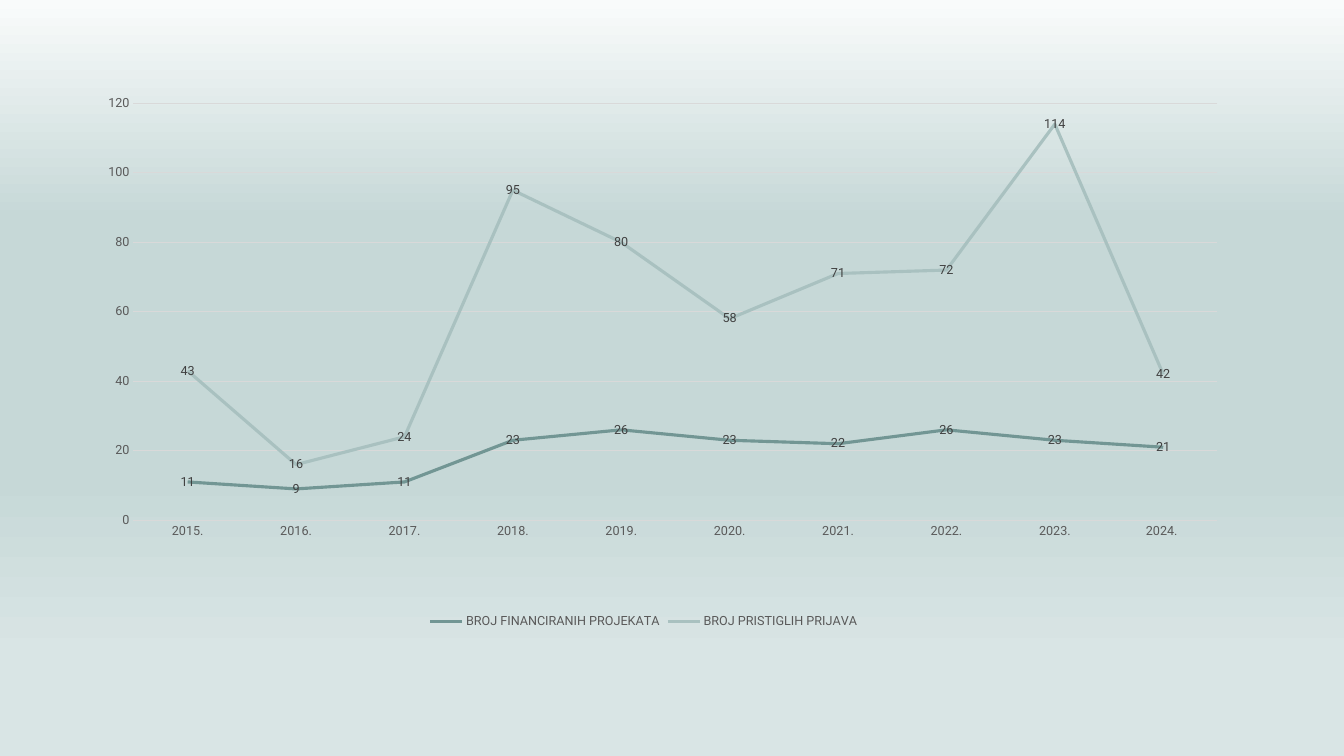
from copy import deepcopy
from dataclasses import dataclass

from lxml import etree
from pptx import Presentation
from pptx.chart import data as cd
from pptx.dml.color import RGBColor
from pptx.enum import chart as ce
from pptx.oxml import ns
from pptx.util import Inches, Pt


@dataclass(frozen=True)
class Theme:
    font: str = "Roboto"
    base: float = 10
    small: float = 9
    thin: float = 0.75
    thick: float = 2.25
    black: str = "000000"
    label: str = "404040"
    axis: str = "595959"
    grid: str = "D9D9D9"
    stops: tuple = ((0, "F9FBFB"), (29, "C6D8D7"), (63, "C6D8D7"), (87, "D9E5E5"))


@dataclass(frozen=True)
class Series:
    name: str
    color: str
    values: tuple[int, ...]


THEME = Theme()
YEARS = [f"{year}." for year in range(2015, 2024)] + ["2024. "]
SERIES = (
    Series("BROJ FINANCIRANIH PROJEKATA", "729694",
           (11, 9, 11, 23, 26, 23, 22, 26, 23, 21)),
    Series("BROJ PRISTIGLIH PRIJAVA", "A9C1C0",
           (43, 16, 24, 95, 80, 58, 71, 72, 114, 42)),
)
FRAME = (0.66, 0.66, 11.45, 5.62)
PLOT = {"layoutTarget": "inner", "xMode": "edge", "yMode": "edge",
        "x": 0.058, "y": 0.065, "w": 0.939, "h": 0.736}


def apply(item, values: dict) -> None:
    for key, value in values.items():
        setattr(item, key, value)


def set_font(font, size: float, color: str) -> None:
    apply(font, {"name": THEME.font, "size": Pt(size), "bold": False})
    font.color.rgb = RGBColor.from_string(color)


def set_line(line, width: float, color: str) -> None:
    line.width = Pt(width)
    line.color.rgb = RGBColor.from_string(color)


def paint_back(slide) -> None:
    fill = slide.background.fill
    fill.gradient()
    fill.gradient_angle = 270
    group = slide.element.find(".//" + ns.qn("a:gsLst"))
    first = deepcopy(group[0])
    for stop in list(group):
        group.remove(stop)
    for _ in THEME.stops:
        group.append(deepcopy(first))
    for stop, (place, color) in zip(fill.gradient_stops, THEME.stops):
        stop.position = place / 100
        stop.color.rgb = RGBColor.from_string(color)


def place_plot(chart) -> None:
    area = chart.element.find(".//" + ns.qn("c:plotArea"))
    layout = area.find(ns.qn("c:layout"))
    if layout is None:
        layout = etree.Element(ns.qn("c:layout"))
        area.insert(0, layout)
    manual = etree.SubElement(layout, ns.qn("c:manualLayout"))
    for key, value in PLOT.items():
        etree.SubElement(manual, ns.qn(f"c:{key}")).set("val", str(value))


def style_axes(chart) -> None:
    none = ce.XL_TICK_MARK.NONE
    for axis in (chart.category_axis, chart.value_axis):
        apply(axis, {"major_tick_mark": none, "minor_tick_mark": none})
        set_font(axis.tick_labels.font, THEME.small, THEME.axis)
    set_line(chart.category_axis.format.line, THEME.thin, THEME.grid)
    value = chart.value_axis
    apply(value, {"minimum_scale": 0, "maximum_scale": 120, "major_unit": 20,
                  "has_major_gridlines": True})
    value.format.line.fill.background()
    set_line(value.major_gridlines.format.line, THEME.thin, THEME.grid)


def style_series(series, color: str) -> None:
    series.smooth = False
    series.marker.style = ce.XL_MARKER_STYLE.NONE
    set_line(series.format.line, THEME.thick, color)
    labels = series.data_labels
    apply(labels, {"show_value": True, "position": ce.XL_LABEL_POSITION.CENTER})
    set_font(labels.font, THEME.small, THEME.label)


def add_lines(slide) -> None:
    data = cd.CategoryChartData()
    data.categories = YEARS
    for item in SERIES:
        data.add_series(item.name, item.values)
    kind = ce.XL_CHART_TYPE.LINE
    chart = slide.shapes.add_chart(kind, *map(Inches, FRAME), data).chart
    apply(chart, {"has_title": False, "has_legend": True})
    set_font(chart.font, THEME.base, THEME.black)
    legend = chart.legend
    apply(legend, {"position": ce.XL_LEGEND_POSITION.BOTTOM,
                   "include_in_layout": False})
    set_font(legend.font, THEME.small, THEME.axis)
    style_axes(chart)
    chart.plots[0].vary_by_categories = False
    for series, item in zip(chart.plots[0].series, SERIES):
        style_series(series, item.color)
    place_plot(chart)


def main() -> None:
    deck = Presentation()
    apply(deck, {"slide_width": Inches(13.33), "slide_height": Inches(7.5)})
    slide = deck.slides.add_slide(deck.slide_layouts[6])
    paint_back(slide)
    add_lines(slide)
    deck.save("out.pptx")


if __name__ == "__main__":
    main()
